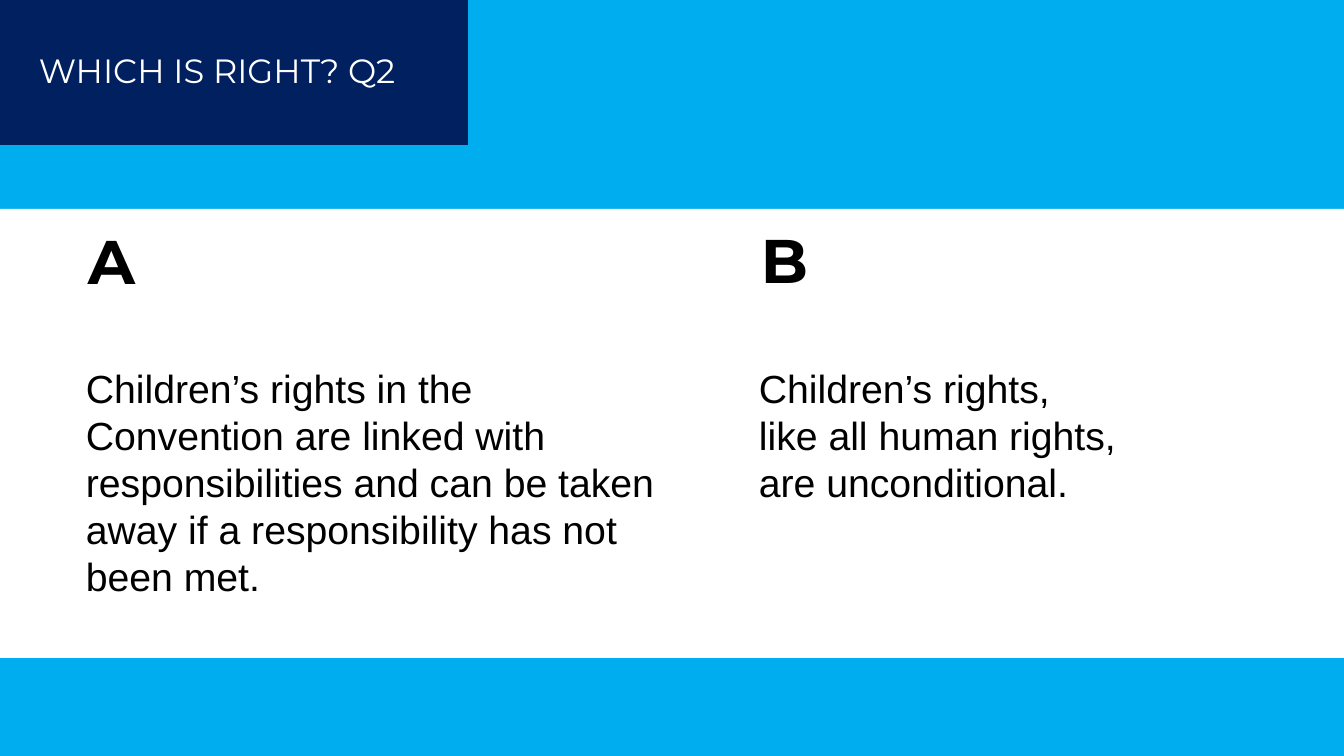
import pptx
import pptx.util
import pptx.dml.color
import pptx.enum.shapes
import pptx.enum.text

# Content: lengths in px
SIZE = (1344, 756)
COLORS = {"sky": "00AEEF", "navy": "002060", "white": "FFFFFF", "black": "000000"}
PANELS = [
    ((0, 209, 1344, 449), "white"),
    ((0, 0, 468, 145), "navy"),
]
TITLE = "WHICH IS RIGHT? Q2"
CHOICES = [
    # letter, answer, left, letter top, answer width, answer height
    ("A", "Children’s rights in the Convention are linked with responsibilities "
          "and can be taken away if a responsibility has not been met.",
     76, 211, 596, 248),
    ("B", "Children’s rights, \vlike all human rights, \vare unconditional.",
     749, 210, 467, 207),
]
BODY_TOP = 359
SCALE = 914400 / 100.8


def px(n):
    return pptx.util.Emu(round(n * SCALE))


def paint(fill, name):
    fill.solid()
    fill.fore_color.rgb = pptx.dml.color.RGBColor.from_string(COLORS[name])


def add_panel(box, color):
    panel = slide.shapes.add_shape(
        pptx.enum.shapes.MSO_SHAPE.RECTANGLE, *map(px, box))
    panel.shadow.inherit = False
    paint(panel.fill, color)
    panel.line.fill.background()


def add_text(box, text, size, face, color="black", bold=False, inset=None):
    frame = slide.shapes.add_textbox(*map(px, box)).text_frame
    frame.word_wrap = True
    frame.auto_size = pptx.enum.text.MSO_AUTO_SIZE.SHAPE_TO_FIT_TEXT
    if inset is not None:
        frame.margin_left = frame.margin_right = px(inset)
        frame.margin_top = frame.margin_bottom = px(inset)
    par = frame.paragraphs[0]
    par.text = text
    for run in par.runs:
        run.font.size = pptx.util.Pt(size)
        run.font.name = face
        run.font.bold = bold
        paint(run.font.fill, color)


# Slide and background
deck = pptx.Presentation()
deck.slide_width, deck.slide_height = map(px, SIZE)
slide = deck.slides.add_slide(deck.slide_layouts[6])
paint(slide.background.fill, "sky")

# Panels and title
for box, color in PANELS:
    add_panel(box, color)
add_text((29, 45, 416, 50), TITLE, 24, "Montserrat", "white")

# Two choices
for letter, answer, left, top, width, height in CHOICES:
    add_text((left, top, 75, 99), letter, 44, "Montserrat", bold=True, inset=12)
    add_text((left, BODY_TOP, width, height), answer, 28, "Arial")

deck.save("out.pptx")
